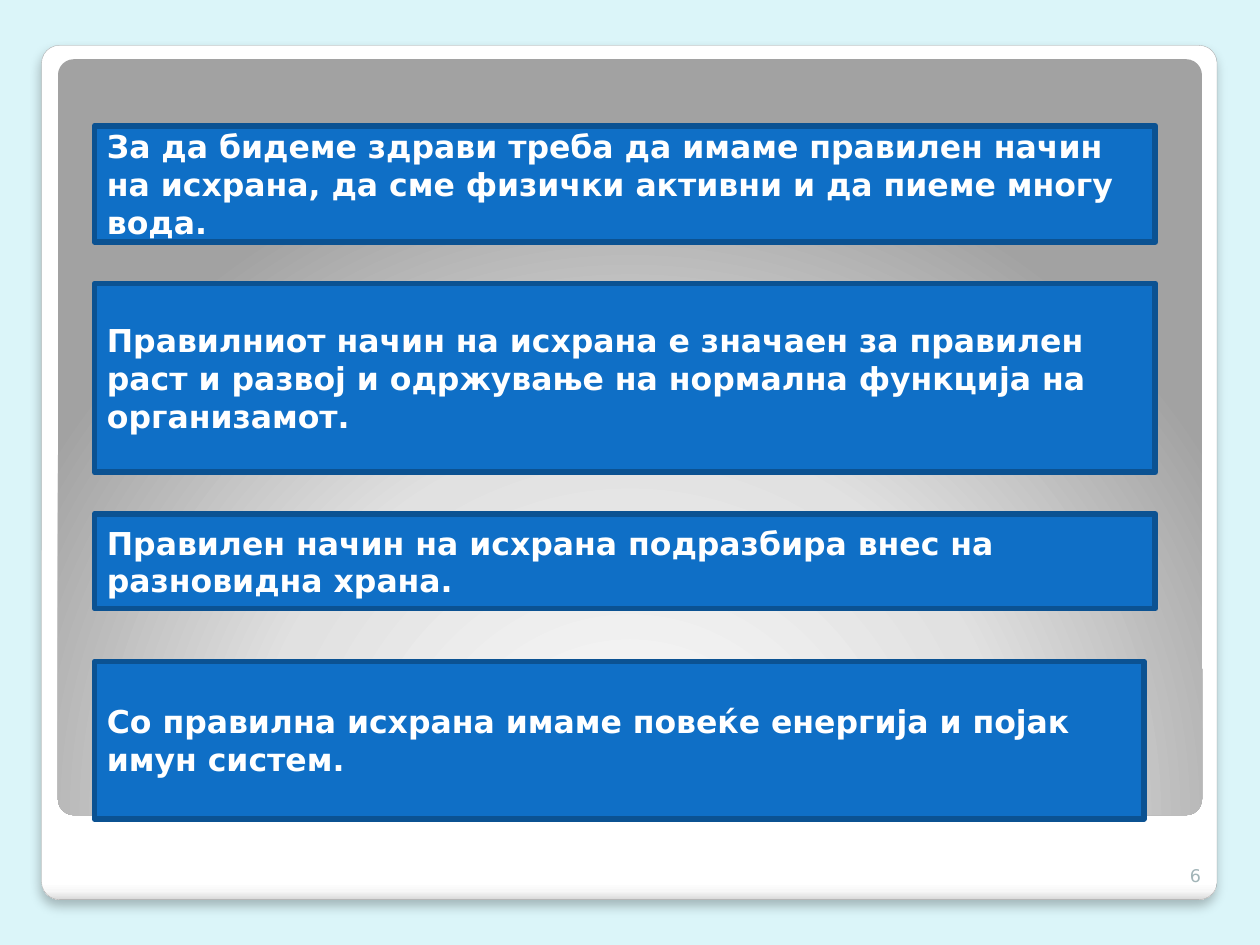
from lxml import etree
from pptx import Presentation
from pptx import util as u
from pptx.dml.color import RGBColor
from pptx.enum import shapes, text
from pptx.oxml import ns, parse_xml

FONT = "DejaVu Sans"
MESSAGES = [
    (1, 8.42, 0.92, "За да бидеме здрави треба да имаме правилен начин на исхрана, "
                    "да сме физички активни и да пиеме многу вода."),
    (2.25, 8.42, 1.5, "Правилниот начин на исхрана е значаен за правилен раст и развој "
                      "и одржување на нормална функција на организамот."),
    (4.08, 8.42, 0.75, "Правилен начин на исхрана подразбира внес на разновидна храна."),
    (5.25, 8.33, 1.25, "Со правилна исхрана имаме повеќе енергија и појак имун систем."),
]


def color(value):
    return RGBColor.from_string(value)


def add_box(page, kind, bounds):
    box = page.shapes.add_shape(kind, *map(u.Inches, bounds))
    box.shadow.inherit = False
    return box


def fill_gradient(box, stops, direction):
    box.fill.background()
    blank = box._element.spPr.find(ns.qn("a:noFill"))
    marks = "".join(
        f'<a:gs pos="{position * 1000}"><a:srgbClr val="{value}"/></a:gs>'
        for position, value in stops)
    gradient = parse_xml(
        f'<a:gradFill {ns.nsdecls("a")} rotWithShape="1">'
        f'<a:gsLst>{marks}</a:gsLst>{direction}</a:gradFill>')
    blank.getparent().replace(blank, gradient)


def add_shadow(box):
    effects = box._element.spPr.find(ns.qn("a:effectLst"))
    shadow = etree.SubElement(
        effects, ns.qn("a:outerShdw"), blurRad=str(u.Pt(6)), dist=str(u.Pt(4)),
        dir="5400000", algn="tl", rotWithShape="0")
    shade = etree.SubElement(shadow, ns.qn("a:srgbClr"), val="000000")
    etree.SubElement(shade, ns.qn("a:alpha"), val="25000")


def write(box, words, size, value, bold, align, anchor):
    frame = box.text_frame
    frame.word_wrap = True
    frame.vertical_anchor = anchor
    frame.text = words
    para = frame.paragraphs[0]
    para.alignment = align
    font = para.runs[0].font
    font.name, font.size, font.bold = FONT, u.Pt(size), bold
    font.color.rgb = color(value)


def add_frame(page, card_bounds, panel_bounds):
    kind = shapes.MSO_SHAPE.ROUNDED_RECTANGLE
    card = add_box(page, kind, card_bounds)
    panel = add_box(page, kind, panel_bounds)
    for box in (card, panel):
        box.adjustments[0] = 0.021
    fill_gradient(card, [(0, "FFFFFF"), (98, "FFFFFF"), (99, "F7F7F7"), (100, "DADADA")],
                  '<a:lin ang="5400000" scaled="0"/>')
    card.line.color.rgb = color("A4A4A4")
    card.line.width = u.Pt(0.16)
    add_shadow(card)
    fill_gradient(panel, [(0, "FFFFFF"), (55, "E1E1E1"), (100, "A2A2A2")],
                  '<a:path path="circle"><a:fillToRect l="50000" t="175000" '
                  'r="50000" b="-75000"/></a:path>')
    panel.line.fill.background()


def add_message(page, bounds, words):
    box = add_box(page, shapes.MSO_SHAPE.RECTANGLE, bounds)
    box.fill.solid()
    box.fill.fore_color.rgb = color("0F6FC6")
    box.line.color.rgb = color("0B5292")
    box.line.width = u.Pt(3.35)
    write(box, words, 18, "FFFFFF", True, text.PP_ALIGN.LEFT, text.MSO_ANCHOR.MIDDLE)


def add_page_number(page, bounds, number):
    box = page.shapes.add_textbox(*map(u.Inches, bounds))
    write(box, number, 10, "A2B5B8", False, text.PP_ALIGN.RIGHT, text.MSO_ANCHOR.BOTTOM)


def main():
    deck = Presentation()
    deck.slide_width, deck.slide_height = u.Inches(10), u.Inches(7.5)
    page = deck.slides.add_slide(deck.slide_layouts[6])
    page.background.fill.solid()
    page.background.fill.fore_color.rgb = color("DBF5F9")
    add_frame(page, (0.33, 0.36, 9.33, 6.78), (0.46, 0.47, 9.08, 6))
    for top, width, height, words in MESSAGES:
        add_message(page, (0.75, top, width, height), words)
    add_page_number(page, (9.13, 6.68, 0.5, 0.4), "6")
    deck.save("out.pptx")


if __name__ == "__main__":
    main()
